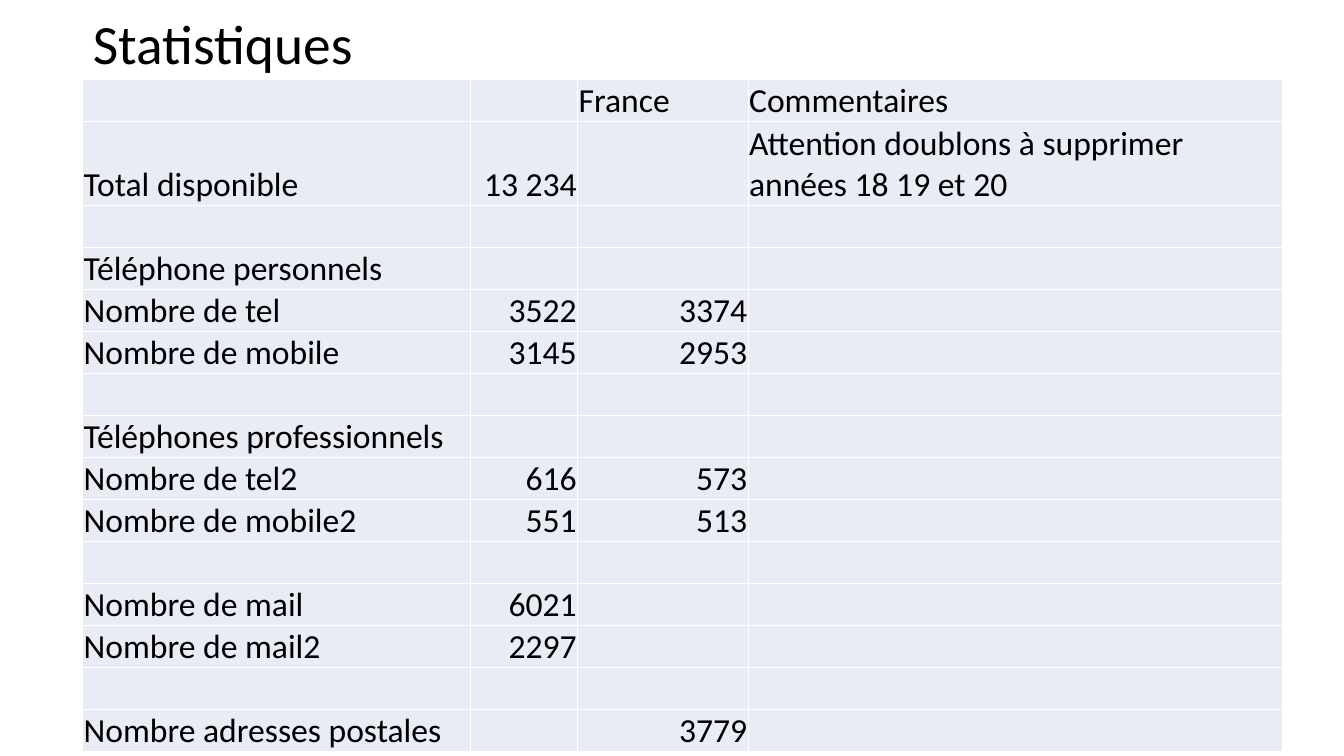
import pptx
import pptx.util
import pptx.dml.color
import pptx.enum.text
import pptx.oxml
import pptx.oxml.ns

Inches, Pt = pptx.util.Inches, pptx.util.Pt
RGBColor = pptx.dml.color.RGBColor
ALIGN = pptx.enum.text.PP_ALIGN
ANCHOR = pptx.enum.text.MSO_ANCHOR

BLACK = RGBColor(0, 0, 0)
WHITE = RGBColor(0xFF, 0xFF, 0xFF)
PALE = RGBColor(0xE9, 0xEB, 0xF5)

WIDE, HIGH = Inches(13.33), Inches(7.5)
LEFT, TOP = Inches(0.82), Inches(0.79)
COLS = (3.85, 1.06, 1.69, 5.3)
ROW = Inches(0.416)

STATS = (
    ("", "", "France", "Commentaires"),
    ("Total disponible", "13 234", "",
     "Attention doublons à supprimer années 18 19 et 20"),
    (),
    ("Téléphone personnels",),
    ("Nombre de tel", "3522", "3374"),
    ("Nombre de mobile", "3145", "2953"),
    (),
    ("Téléphones professionnels",),
    ("Nombre de tel2", "616", "573"),
    ("Nombre de mobile2", "551", "513"),
    (),
    ("Nombre de mail", "6021"),
    ("Nombre de mail2", "2297"),
    (),
    ("Nombre adresses postales", "", "3779"),
)

TITLE = {"name": "Calibri", "size": Pt(39.6), "bold": False}
BODY = {"name": "Calibri", "size": Pt(24), "bold": False}
CELL = {"vertical_anchor": ANCHOR.BOTTOM, "margin_left": Inches(0.01),
        "margin_right": Inches(0.01), "margin_top": Inches(0.01),
        "margin_bottom": 0}
FLAGS = {"first_row": False, "horz_banding": False}


def apply(item, form):
    for key, value in form.items():
        setattr(item, key, value)


def write(para, text, form, align):
    para.alignment = align
    run = para.add_run()
    run.text = text
    apply(run.font, form)
    run.font.color.rgb = BLACK


def border(cell):
    props = cell._tc.get_or_add_tcPr()
    for side in ("lnL", "lnR", "lnT", "lnB"):
        props.append(pptx.oxml.parse_xml(
            f'<a:{side} {pptx.oxml.ns.nsdecls("a")} w="{Pt(1)}"><a:solidFill>'
            f'<a:srgbClr val="{WHITE}"/></a:solidFill></a:{side}>'))


def add_title(slide, text):
    title = slide.shapes.title
    apply(title, {"left": LEFT, "top": Inches(0.13),
                  "width": Inches(11.5), "height": Inches(0.66)})
    frame = title.text_frame
    apply(frame, {"vertical_anchor": ANCHOR.MIDDLE, "word_wrap": True,
                  "auto_size": pptx.enum.text.MSO_AUTO_SIZE.NONE})
    frame.paragraphs[0].line_spacing = 0.9
    write(frame.paragraphs[0], text, TITLE, ALIGN.LEFT)


def add_grid(slide, rows):
    table = slide.shapes.add_table(
        len(rows), len(COLS), LEFT, TOP,
        Inches(sum(COLS)), ROW * (len(rows) + 1)).table
    apply(table, FLAGS)
    for col, width in zip(table.columns, COLS):
        col.width = Inches(width)
    for r, texts in enumerate(rows):
        # The row with the long remark takes two lines.
        table.rows[r].height = ROW * (2 if r == 1 else 1)
        for c in range(len(COLS)):
            cell = table.cell(r, c)
            apply(cell, CELL)
            border(cell)
            cell.fill.solid()
            cell.fill.fore_color.rgb = PALE
            text = texts[c] if c < len(texts) else ""
            if text:
                number = r > 0 and c in (1, 2)
                write(cell.text_frame.paragraphs[0], text, BODY,
                      ALIGN.RIGHT if number else ALIGN.LEFT)


def main():
    deck = pptx.Presentation()
    deck.slide_width, deck.slide_height = WIDE, HIGH
    slide = deck.slides.add_slide(deck.slide_layouts[5])
    add_title(slide, "Statistiques")
    add_grid(slide, STATS)
    deck.save("out.pptx")


if __name__ == "__main__":
    main()
